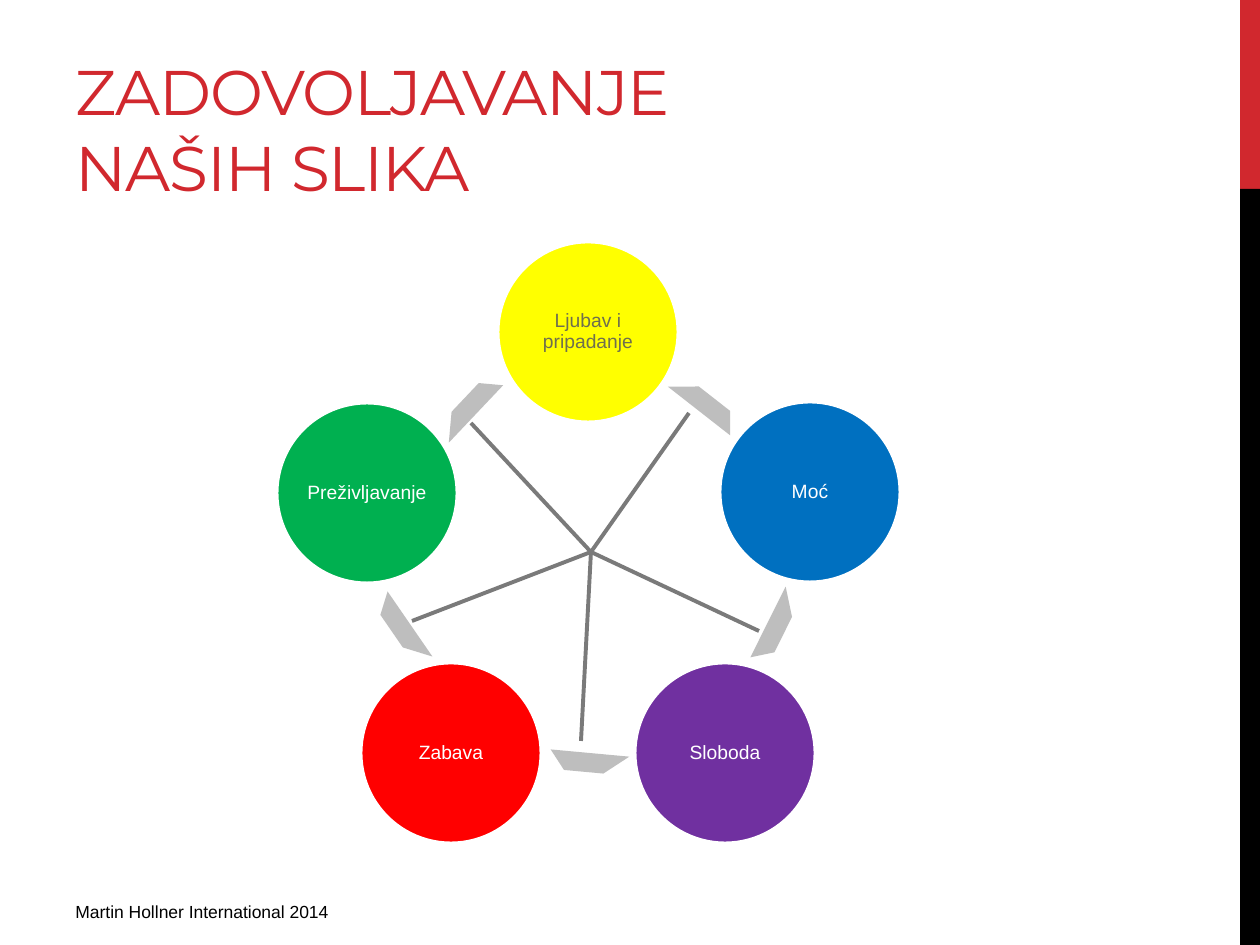
from lxml.etree import SubElement
from pptx import Presentation
from pptx.dml.color import RGBColor
from pptx.enum.shapes import MSO_CONNECTOR, MSO_SHAPE
from pptx.enum.text import MSO_ANCHOR, MSO_AUTO_SIZE, PP_ALIGN
from pptx.oxml.ns import qn
from pptx.util import Pt

EMU_PER_PX = 914400 / 126
COLORS = {
    "accent": "D1282E", "black": "000000", "white": "FFFFFF",
    "yellow": "FFFF00", "olive": "6F6F4E", "blue": "0070C0",
    "purple": "7030A0", "red": "FF0000", "green": "00B050",
    "stripe": "BEBEBE", "spoke": "7A7A7A",
}


def px(*lengths):
    return [round(length * EMU_PER_PX) for length in lengths]


def add_filled(kind, box, color):
    shape = slide.shapes.add_shape(kind, *px(*box))
    shape.shadow.inherit = False
    shape.fill.solid()
    shape.fill.fore_color.rgb = RGBColor.from_string(COLORS[color])
    shape.line.fill.background()
    return shape


prs = Presentation()
prs.slide_width, prs.slide_height = px(1260, 945)
slide = prs.slides.add_slide(prs.slide_layouts[5])

add_filled(MSO_SHAPE.RECTANGLE, (1240, 0, 20, 189), "accent")
add_filled(MSO_SHAPE.RECTANGLE, (1240, 189, 20, 756), "black")

title = slide.shapes.title
title.left, title.top, title.width, title.height = px(63, 21, 798, 189)
title_frame = title.text_frame
title_frame.word_wrap = True
title_frame.auto_size = MSO_AUTO_SIZE.NONE
title_frame.vertical_anchor = MSO_ANCHOR.BOTTOM
heading = title_frame.paragraphs[0]
heading.alignment = PP_ALIGN.LEFT
heading_run = heading.add_run()
heading_run.text = "ZADOVOLJAVANJE NAŠIH SLIKA"
heading_run.font.name = "Montserrat"
heading_run.font.size = Pt(36)
heading_run.font.color.rgb = RGBColor.from_string(COLORS["accent"])
heading_run.font._element.set("spc", "-60")

STRIPE_WIDTH, STRIPE_HEIGHT = 49, 62
stripes = [
    (699, 411, 89.7), (768, 622, 168.2), (590, 753, 236.9),
    (410, 624, 287.1), (476, 414, 5.1),
]
for center_x, center_y, angle in stripes:
    box = (center_x - STRIPE_WIDTH / 2, center_y - STRIPE_HEIGHT / 2,
           STRIPE_WIDTH, STRIPE_HEIGHT)
    stripe = add_filled(MSO_SHAPE.DIAGONAL_STRIPE, box, "stripe")
    stripe.rotation = angle

DIAMETER = 181
needs = [
    ("Ljubav i pripadanje", 588, 332, "yellow", "olive"),
    ("Moć", 810, 492, "blue", "white"),
    ("Sloboda", 725, 753, "purple", "white"),
    ("Zabava", 451, 753, "red", "white"),
    ("Preživljavanje", 367, 493, "green", "white"),
]
for need, center_x, center_y, fill, ink in needs:
    box = (center_x - DIAMETER / 2, center_y - DIAMETER / 2, DIAMETER, DIAMETER)
    circle = add_filled(MSO_SHAPE.OVAL, box, fill)
    circle.line.color.rgb = RGBColor.from_string(COLORS["white"])
    circle.line.width = Pt(2.25)
    frame = circle.text_frame
    frame.word_wrap = True
    frame.vertical_anchor = MSO_ANCHOR.MIDDLE
    (frame.margin_left, frame.margin_top,
     frame.margin_right, frame.margin_bottom) = px(2, 2, 2, 2)
    label = frame.paragraphs[0]
    label.alignment = PP_ALIGN.CENTER
    label.line_spacing = 0.9
    label_run = label.add_run()
    label_run.text = need
    label_run.font.name = "Arial"
    label_run.font.size = Pt(11)
    label_run.font.color.rgb = RGBColor.from_string(COLORS[ink])

HUB = (591, 552)
spoke_ends = [(471, 423), (689, 413), (759, 631), (581, 741), (412, 621)]
for spoke_end in spoke_ends:
    spoke = slide.shapes.add_connector(MSO_CONNECTOR.STRAIGHT, *px(*HUB, *spoke_end))
    spoke.line.color.rgb = RGBColor.from_string(COLORS["spoke"])
    spoke.line.width = Pt(2.25)
    SubElement(spoke._element.spPr, qn("a:effectLst"))

credit = slide.shapes.add_textbox(*px(63, 895, 473, 39))
credit.text_frame.word_wrap = True
credit_run = credit.text_frame.paragraphs[0].add_run()
credit_run.text = "Martin Hollner International 2014"
credit_run.font.name = "Arial"
credit_run.font.size = Pt(10)
credit_run.font.color.rgb = RGBColor.from_string(COLORS["black"])

prs.save("out.pptx")
